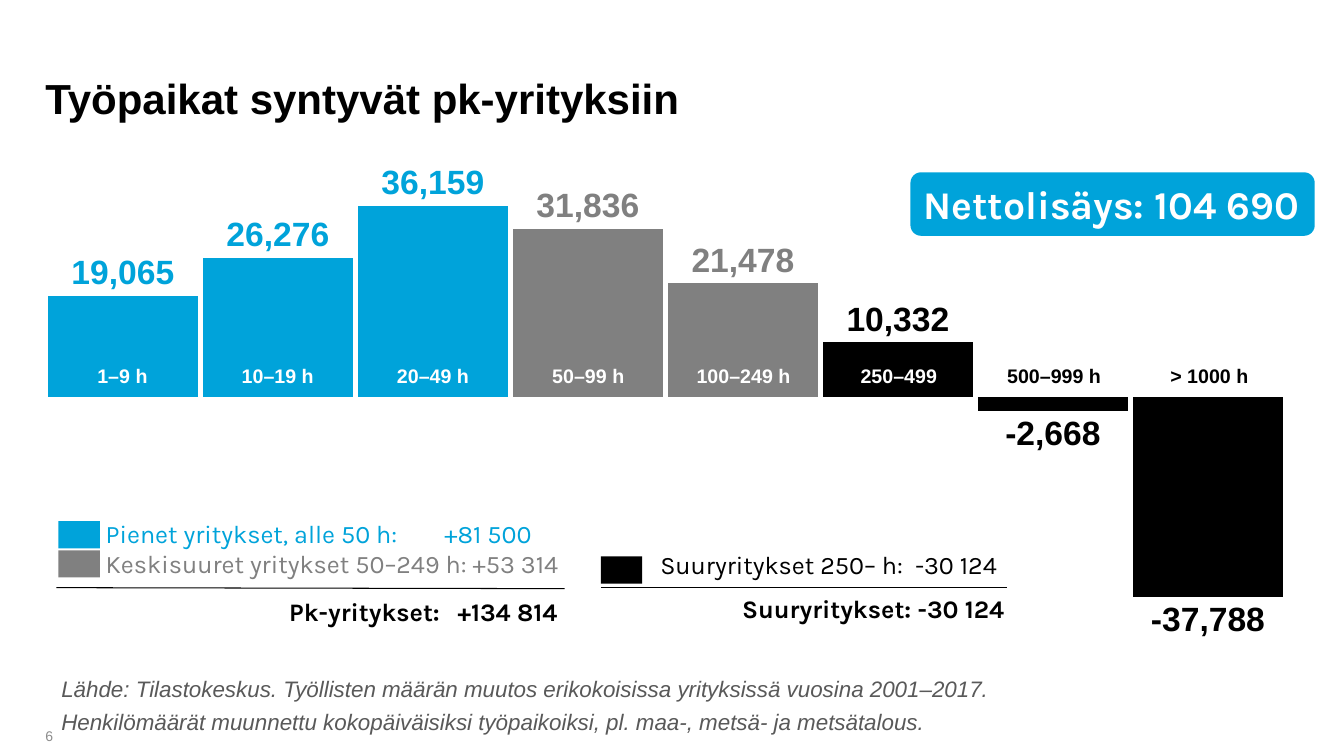
from lxml.etree import SubElement
from pptx import Presentation
from pptx.chart.data import CategoryChartData
from pptx.dml.color import RGBColor
from pptx.enum.chart import XL_CHART_TYPE, XL_LABEL_POSITION
from pptx.enum.shapes import MSO_CONNECTOR, MSO_SHAPE
from pptx.enum.text import MSO_ANCHOR, PP_ALIGN
from pptx.oxml import parse_xml
from pptx.oxml.ns import nsdecls, qn
from pptx.util import Inches, Pt

BLUE, GREY, BLACK, WHITE = "00A3DA", "808080", "000000", "FFFFFF"
SIZE_CLASSES = [
    ("1–9 h", 19065, BLUE, WHITE),
    ("10–19 h", 26276, BLUE, WHITE),
    ("20–49 h", 36159, BLUE, WHITE),
    ("50–99 h", 31836, GREY, WHITE),
    ("100–249 h", 21478, GREY, WHITE),
    ("250–499", 10332, BLACK, WHITE),
    ("500–999 h", -2668, BLACK, BLACK),
    ("> 1000 h", -37788, BLACK, BLACK),
]


def color(code):
    return RGBColor.from_string(code)


def place(shape, bounds):
    shape.left, shape.top, shape.width, shape.height = map(Inches, bounds)


def style(font, size, code, name="Arial", bold=False, italic=False):
    font.size, font.name, font.bold, font.italic = Pt(size), name, bold, italic
    font.color.rgb = color(code)


def add_tab(para, position):
    tabs = SubElement(para._p.get_or_add_pPr(), qn("a:tabLst"))
    SubElement(tabs, qn("a:tab"), pos=str(Inches(position)), algn="l")


def add_text(page, bounds, lines, size, name="Arial", bold=False, italic=False,
             align=PP_ALIGN.LEFT, tab=None, gap=0, wrap=True):
    """Add a text box from (text, colour) lines and return its frame."""
    frame = page.shapes.add_textbox(*map(Inches, bounds)).text_frame
    frame.word_wrap = wrap
    for index, (text, code) in enumerate(lines):
        para = frame.add_paragraph() if index else frame.paragraphs[0]
        para.text = text
        para.alignment = align
        if index and gap:
            para.space_before = Pt(gap)
        if "\t" in text:
            add_tab(para, tab)
        style(para.font, size, code, name, bold, italic)
    return frame


def add_block(page, kind, bounds, code):
    block = page.shapes.add_shape(kind, *map(Inches, bounds))
    block.shadow.inherit = False
    block.fill.solid()
    block.fill.fore_color.rgb = color(code)
    block.line.fill.background()
    return block


def add_rule(page, left, right, start_y, end_y):
    rule = page.shapes.add_connector(
        MSO_CONNECTOR.STRAIGHT, *map(Inches, (left, start_y, right, end_y)))
    rule.line.color.rgb = color(BLACK)
    rule.line.width = Pt(0.75)
    SubElement(rule._element.spPr, qn("a:effectLst"))


def add_title(page, text):
    title = page.shapes.title
    place(title, (0.45, 0, 9.99, 1.22))
    frame = title.text_frame
    frame.margin_left = frame.margin_right = frame.margin_top = frame.margin_bottom = 0
    frame.vertical_anchor = MSO_ANCHOR.BOTTOM
    frame.text = text
    frame.paragraphs[0].alignment = PP_ALIGN.LEFT
    style(frame.paragraphs[0].font, 30, BLACK, bold=True)


def set_plot_area(chart):
    plot_area = chart._chartSpace.chart.plotArea
    for layout in plot_area.findall(qn("c:layout")):
        plot_area.remove(layout)
    plot_area.insert(0, parse_xml(
        f'<c:layout {nsdecls("c")}><c:manualLayout><c:layoutTarget val="inner"/>'
        '<c:xMode val="edge"/><c:yMode val="edge"/><c:x val="0"/><c:y val="0.005"/>'
        '<c:w val="1"/><c:h val="0.924"/></c:manualLayout></c:layout>'))


def add_job_chart(page):
    data = CategoryChartData(number_format="#,##0")
    data.categories = [str(number) for number in range(1, len(SIZE_CLASSES) + 1)]
    data.add_series("Series 1", [value for _, value, _, _ in SIZE_CLASSES])
    chart = page.shapes.add_chart(
        XL_CHART_TYPE.COLUMN_CLUSTERED,
        *map(Inches, (0.45, 1.55, 12.3, 5.12)), data).chart
    chart.has_legend = chart.has_title = False
    style(chart.font, 10, BLACK)
    axis = chart.value_axis
    axis.minimum_scale, axis.maximum_scale, axis.major_unit = -45000, 45000, 5000
    axis.has_major_gridlines = False
    axis.visible = chart.category_axis.visible = False
    set_plot_area(chart)

    plot = chart.plots[0]
    plot.gap_width, plot.overlap, plot.vary_by_categories = 3, 32, False
    series = plot.series[0]
    series.invert_if_negative = False
    series.format.fill.solid()
    series.format.fill.fore_color.rgb = color(BLUE)
    labels = series.data_labels
    labels.show_value = True
    labels.number_format, labels.number_format_is_linked = "#,##0", False
    labels.position = XL_LABEL_POSITION.OUTSIDE_END
    style(labels.font, 24, BLACK, bold=True)
    for index, (_, _, code, _) in enumerate(SIZE_CLASSES):
        point = series.points[index]
        point.format.fill.solid()
        point.format.fill.fore_color.rgb = color(code)
        style(point.data_label.font, 24, code, bold=True)
        point.data_label.position = XL_LABEL_POSITION.OUTSIDE_END


def add_size_labels(page):
    for index, (name, _, _, code) in enumerate(SIZE_CLASSES):
        add_text(page, (0.53 + 1.54 * index, 3.56, 1.37, 0.34), [(name, code)],
                 14, bold=True, align=PP_ALIGN.CENTER)


def add_summary(page):
    for left, top, code in ((0.58, 5.17, BLUE), (0.58, 5.46, GREY), (5.96, 5.52, BLACK)):
        add_block(page, MSO_SHAPE.RECTANGLE, (left, top, 0.41, 0.27), code)
    add_text(page, (0.95, 5.09, 5.67, 0.71),
             [("Pienet yritykset, alle 50 h:\t+81 500", BLUE),
              ("Keskisuuret yritykset 50–249 h: +53 314", GREY)],
             18, "Karla", tab=3.36)
    add_text(page, (6.45, 5.4, 3.62, 0.4), [("Suuryritykset 250– h:\t-30 124", BLACK)],
             18, "Karla", tab=2.53, wrap=False)
    add_rule(page, 0.56, 5.6, 5.83, 5.84)
    add_rule(page, 5.96, 9.99, 5.83, 5.83)
    add_text(page, (2.77, 5.87, 2.87, 0.4), [("Pk-yritykset:\t+134 814", BLACK)],
             18, "Karla", bold=True, tab=1.67)
    add_text(page, (7.07, 5.84, 2.99, 0.4), [("Suuryritykset: -30 124", BLACK)],
             18, "Karla", bold=True, align=PP_ALIGN.RIGHT)


def add_net_badge(page):
    badge = add_block(page, MSO_SHAPE.ROUNDED_RECTANGLE, (9.03, 1.71, 4.01, 0.63), BLUE)
    badge.text_frame.text = "Nettolisäys: 104 690"
    para = badge.text_frame.paragraphs[0]
    para.alignment = PP_ALIGN.LEFT
    style(para.font, 28, WHITE, "Karla", bold=True)


def add_footer(page):
    add_text(page, (0.51, 6.65, 11.66, 0.72),
             [("Lähde: Tilastokeskus. Työllisten määrän muutos erikokoisissa "
               "yrityksissä vuosina 2001–2017.", "595959"),
              ("Henkilömäärät muunnettu kokopäiväisiksi työpaikoiksi, "
               "pl. maa-, metsä- ja metsätalous.", "595959")],
             16, italic=True, gap=4)
    number = add_text(page, (0.45, 7.13, 0.63, 0.35), [("6", "8C8C8C")], 10)
    number.margin_left = 0
    number.vertical_anchor = MSO_ANCHOR.MIDDLE


def main():
    deck = Presentation()
    deck.slide_width, deck.slide_height = Inches(13.33), Inches(7.5)
    page = deck.slides.add_slide(deck.slide_layouts[5])
    add_title(page, "Työpaikat syntyvät pk-yrityksiin")
    add_job_chart(page)
    add_size_labels(page)
    add_summary(page)
    add_net_badge(page)
    add_footer(page)
    deck.save("out.pptx")


if __name__ == "__main__":
    main()
